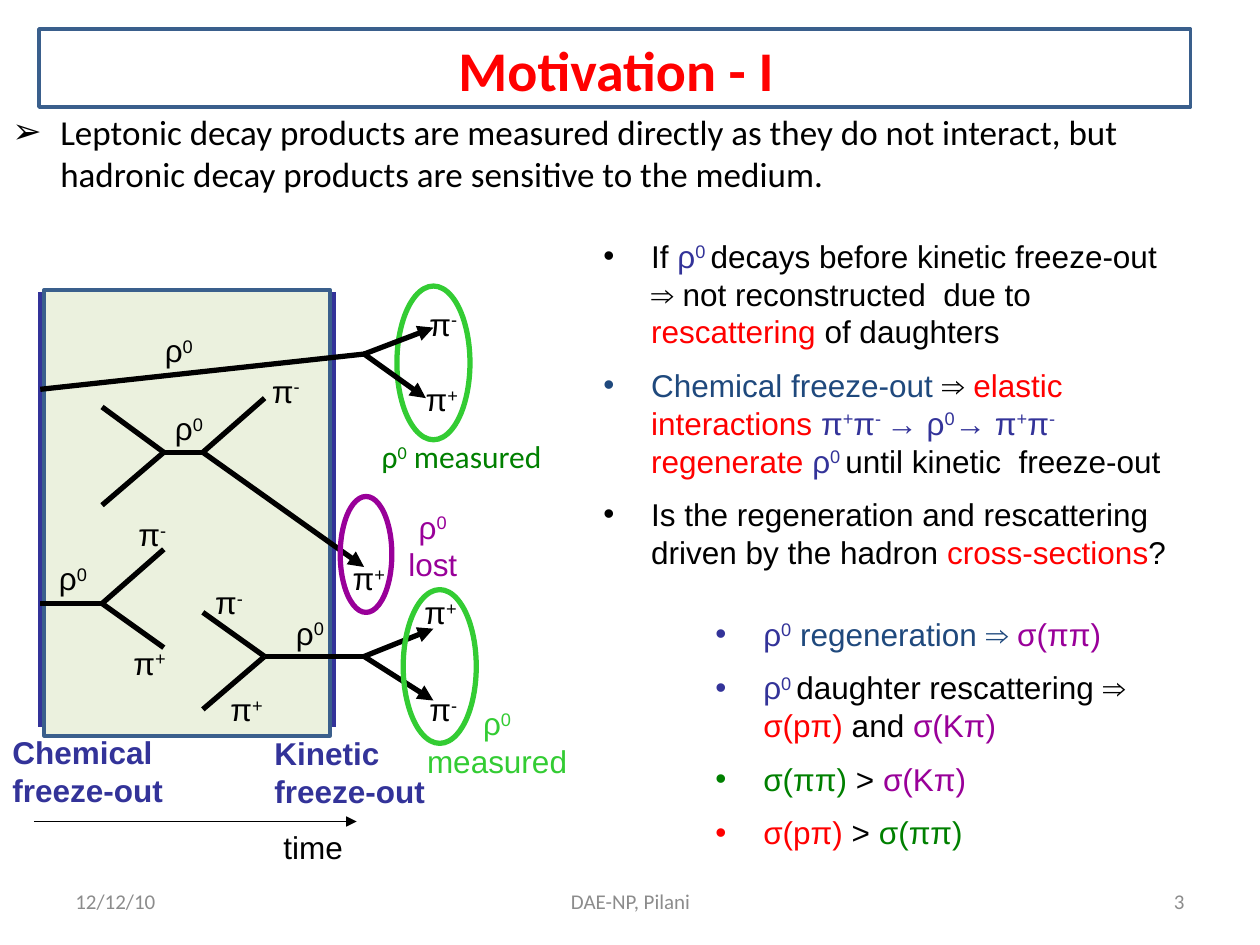
from typing import NamedTuple

from lxml import etree
from pptx import Presentation
from pptx.dml.color import RGBColor
from pptx.enum.shapes import MSO_CONNECTOR, MSO_SHAPE
from pptx.enum.text import MSO_ANCHOR, PP_ALIGN
from pptx.oxml.ns import qn
from pptx.util import Inches, Pt

RECT, OVAL = MSO_SHAPE.RECTANGLE, MSO_SHAPE.OVAL
LINE = MSO_CONNECTOR.STRAIGHT
LEFT, MID, RIGHT = PP_ALIGN.LEFT, PP_ALIGN.CENTER, PP_ALIGN.RIGHT

BLACK, BLUE, NAVY, RED = "000000", "333399", "1F497D", "FF0000"
LIME, GREEN, PLUM = "33CC33", "008000", "990099"
FRAME, MEDIUM, GRAY = "3A5F8C", "EBF1DE", "8C8C8C"


class Box(NamedTuple):
    x: float
    y: float
    w: float
    h: float


class Span(NamedTuple):
    text: str  # parts between carets are raised
    color: str = BLACK
    bold: bool = False


class Style(NamedTuple):
    size: int = 18
    face: str = "Arial"
    align: PP_ALIGN = LEFT
    wrap: bool = True
    middle: bool = False
    bullet: str = ""


class Track(NamedTuple):
    start: tuple[float, float]
    end: tuple[float, float]
    arrow: bool = False
    color: str = BLACK
    width: float = 3


class Ring(NamedTuple):
    box: Box
    color: str


def rgb(code: str) -> RGBColor:
    return RGBColor.from_string(code)


def draw_shape(slide, kind: MSO_SHAPE, box: Box, color: str, width: float, fill: str = "") -> None:
    shape = slide.shapes.add_shape(kind, *map(Inches, box))
    shape.shadow.inherit = False
    shape.line.color.rgb = rgb(color)
    shape.line.width = Pt(width)
    if fill:
        shape.fill.solid()
        shape.fill.fore_color.rgb = rgb(fill)
    else:
        shape.fill.background()


def draw_track(slide, track: Track) -> None:
    link = slide.shapes.add_connector(LINE, *map(Inches, track.start + track.end))
    link.line.color.rgb = rgb(track.color)
    link.line.width = Pt(track.width)
    props = link._element.spPr
    if track.arrow:
        etree.SubElement(props.find(qn("a:ln")), qn("a:tailEnd"), type="triangle")
    etree.SubElement(props, qn("a:effectLst"))


def add_bullet(para, mark: str) -> None:
    props = para._p.get_or_add_pPr()
    props.set("marL", str(Inches(0.38)))
    props.set("indent", str(-Inches(0.38)))
    etree.SubElement(props, qn("a:buFont"), typeface="Arial")
    etree.SubElement(props, qn("a:buChar"), char=mark)


def write(slide, box: Box, paras: list[list[Span]], style: Style = Style()) -> None:
    frame = slide.shapes.add_textbox(*map(Inches, box)).text_frame
    frame.word_wrap = style.wrap
    frame.vertical_anchor = MSO_ANCHOR.MIDDLE if style.middle else MSO_ANCHOR.TOP
    for row, spans in enumerate(paras):
        para = frame.add_paragraph() if row else frame.paragraphs[0]
        if style.bullet:
            add_bullet(para, style.bullet)
        if row:
            para.space_before = Pt(style.size / 2)
        para.alignment = style.align
        para.font.size = Pt(style.size)
        para.font.name = style.face
        for span in spans:
            for part, text in enumerate(span.text.split("^")):
                if not text:
                    continue
                run = para.add_run()
                run.text = text
                run.font.color.rgb = rgb(span.color)
                if span.bold:
                    run.font.bold = True
                if part % 2:
                    run._r.get_or_add_rPr().set("baseline", "30000")


# Decay diagram: freeze-out lines, decay tracks, rings
FREEZE = [Track((x, 2.32), (x, 5.77), color=BLUE, width=2.25) for x in (0.32, 2.65)]
TRACKS = [
    Track((0.32, 3.09), (2.89, 2.81)),
    Track((2.89, 2.81), (3.38, 3.16), True),
    Track((2.89, 2.81), (3.44, 2.6), True),
    Track((0.81, 3.23), (1.3, 3.59)),
    Track((0.81, 4.01), (1.3, 3.59)),
    Track((1.3, 3.59), (1.61, 3.59)),
    Track((1.61, 3.59), (2.1, 3.16)),
    Track((1.61, 3.59), (2.89, 4.5), True),
    Track((0.32, 4.79), (0.81, 4.79)),
    Track((0.81, 4.79), (1.3, 4.36)),
    Track((0.81, 4.79), (1.3, 5.14)),
    Track((1.61, 4.86), (2.1, 5.21)),
    Track((1.61, 5.63), (2.1, 5.21)),
    Track((2.1, 5.21), (2.89, 5.21)),
    Track((2.89, 5.21), (3.44, 4.99), True),
    Track((2.89, 5.21), (3.44, 5.56), True),
    Track((0.27, 6.52), (2.83, 6.52), True, width=0.75),
]
BACK = Ring(Box(3.15, 2.27, 0.58, 1.22), LIME)
FRONT = [Ring(Box(2.7, 3.94, 0.41, 0.92), PLUM), Ring(Box(3.2, 4.68, 0.58, 1.22), LIME)]

# Particle symbols: width and places
SIGNS = {
    "ρ^0": (0.54, [(1.21, 2.58), (1.29, 3.2), (0.37, 4.39), (2.25, 4.82)]),
    "π^-": (0.51, [(3.31, 2.37), (2.06, 2.9), (1, 4.04), (1.61, 4.58), (3.31, 5.43)]),
    "π^+": (0.55, [(3.28, 2.97), (2.7, 4.39), (0.96, 5.06), (3.27, 4.66), (1.73, 5.43)]),
}

POINTS = [
    [Span("If "), Span("ρ^0 ^", BLUE), Span("decays before kinetic freeze-out "),
     Span("⇒", bold=True), Span(" not reconstructed  due to "),
     Span("rescattering", RED), Span(" of daughters")],
    [Span("Chemical freeze-out ", NAVY), Span("⇒ ", bold=True),
     Span("elastic interactions ", RED), Span("π^+^π^- ^", BLUE), Span("→", BLUE, True),
     Span(" ρ^0^", BLUE), Span("→ ", BLUE, True), Span("π^+^π^- ^", BLUE),
     Span("regenerate ", RED), Span("ρ^0 ^", BLUE), Span("until kinetic  freeze-out")],
    [Span("Is the regeneration and rescattering driven by the hadron "),
     Span("cross-sections", RED), Span("?")],
]
RATES = [
    [Span("ρ^0^", BLUE), Span(" regeneration ", NAVY), Span("⇒ ", NAVY, True),
     Span("σ(ππ)", PLUM)],
    [Span("ρ^0 ^", BLUE), Span("daughter rescattering "), Span("⇒ ", bold=True),
     Span("σ(pπ) ", RED), Span("and "), Span("σ(Kπ)", PLUM)],
    [Span("σ(ππ) ", GREEN), Span("> "), Span("σ(Kπ)", PLUM)],
    [Span("σ(pπ) ", RED), Span("> "), Span("σ(ππ)", GREEN)],
]
LEAD = ("Leptonic decay products are measured directly as they do not interact, "
        "but hadronic decay products are sensitive to the medium.")


def draw_decays(slide) -> None:
    draw_shape(slide, RECT, Box(0.35, 2.3, 2.27, 3.54), FRAME, 2, MEDIUM)
    draw_shape(slide, OVAL, BACK.box, BACK.color, 3)
    for track in FREEZE + TRACKS:
        draw_track(slide, track)
    for ring in FRONT:
        draw_shape(slide, OVAL, ring.box, ring.color, 3)
    tight = Style(wrap=False)
    for sign, (width, spots) in SIGNS.items():
        for x, y in spots:
            write(slide, Box(x, y, width, 0.39), [[Span(sign)]], tight)
    write(slide, Box(0, 5.77, 1.58, 0.68), [[Span("Chemical freeze-out", BLUE, True)]])
    write(slide, Box(2.08, 5.78, 1.58, 0.68), [[Span("Kinetic freeze-out", BLUE, True)]])
    write(slide, Box(2.15, 6.52, 0.68, 0.39), [[Span("time")]], tight)
    write(slide, Box(3.07, 3.98, 0.73, 0.68), [[Span("ρ^0^ lost", PLUM)]], Style(align=MID))
    write(slide, Box(3.17, 5.54, 1.55, 0.68), [[Span("ρ^0^ measured", LIME)]], Style(align=MID))
    write(slide, Box(2.93, 3.42, 1.54, 0.39), [[Span("ρ^0^ measured", GREEN)]],
          Style(face="Calibri", wrap=False))


def main() -> None:
    deck = Presentation()
    deck.slide_width, deck.slide_height = Inches(10), Inches(7.5)
    slide = deck.slides.add_slide(deck.slide_layouts[6])
    draw_decays(slide)

    # Title and lead
    draw_shape(slide, RECT, Box(0.31, 0.23, 9.14, 0.62), FRAME, 2)
    write(slide, Box(0.39, 0.23, 9, 0.94), [[Span("Motivation - I", RED, True)]],
          Style(32, "Calibri", MID))
    write(slide, Box(0, 0.83, 9.92, 1.28), [[Span(LEAD)]], Style(20, "Calibri", bullet="➢"))

    # Arguments
    write(slide, Box(4.69, 1.83, 4.77, 3.35), POINTS, Style(bullet="•"))
    write(slide, Box(5.58, 4.83, 3.67, 1.68), RATES, Style(bullet="•"))

    # Footer
    for x, width, text, align in ((0.5, 2.33, "12/12/10", LEFT),
                                  (3.42, 3.17, "DAE-NP, Pilani", MID), (7.17, 2.33, "3", RIGHT)):
        write(slide, Box(x, 6.95, width, 0.4), [[Span(text, GRAY)]],
              Style(12, "Calibri", align, middle=True))
    deck.save("out.pptx")


if __name__ == "__main__":
    main()
